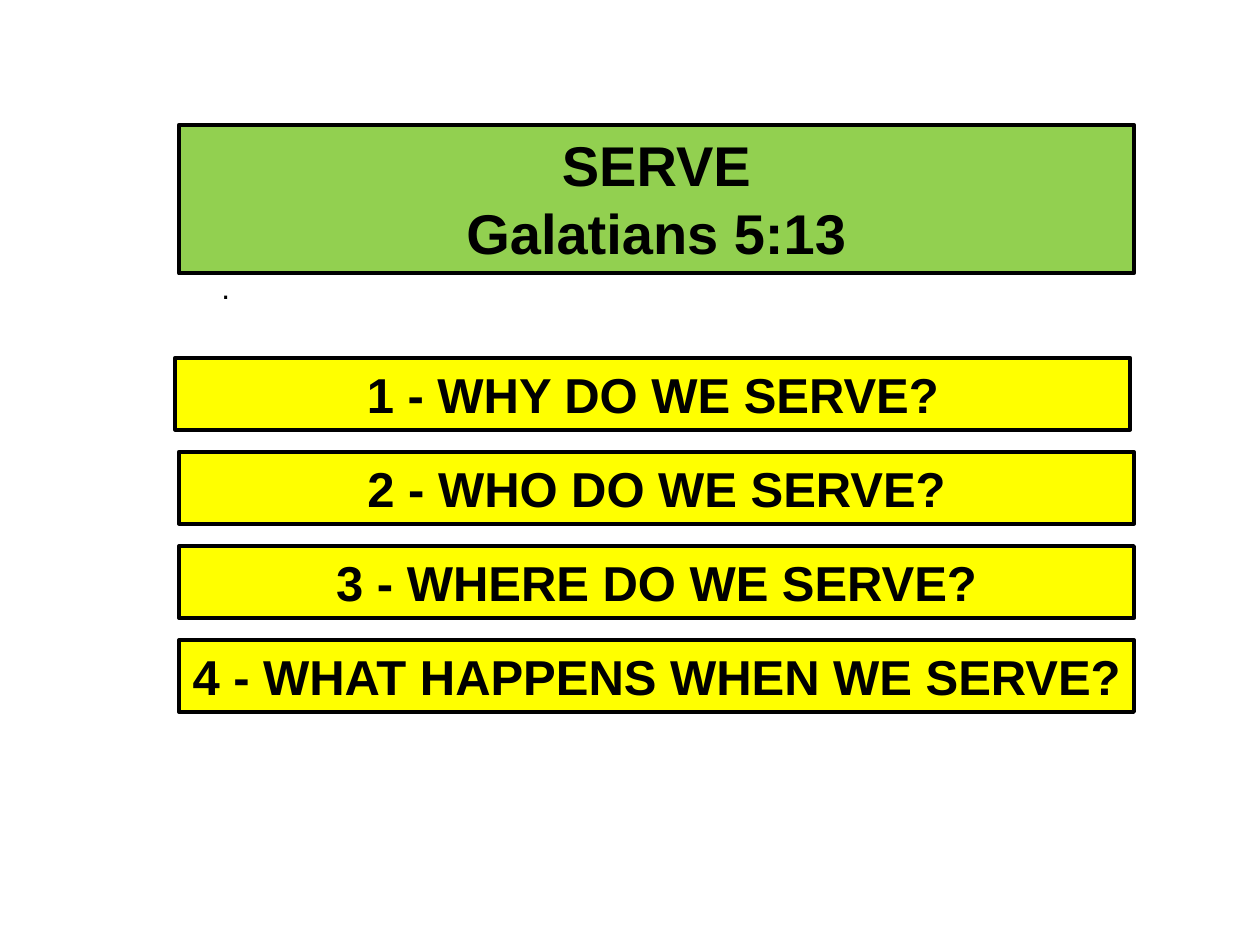
from pptx import Presentation
from pptx.dml.color import RGBColor
from pptx.enum.shapes import MSO_SHAPE as Shape
from pptx.enum.text import MSO_ANCHOR as Anchor, MSO_AUTO_SIZE as AutoSize, PP_ALIGN as Align
from pptx.util import Inches, Pt

BLACK, YELLOW, GREEN = "000000", "FFFF00", "92D050"
LEFT, WIDTH = 1.42, 7.58
QUESTION_TOP, QUESTION_PITCH, QUESTION_HEIGHT = 2.84, 0.747, 0.57
QUESTIONS = [
    "1 - WHY DO WE SERVE?",
    "2 - WHO DO WE SERVE?",
    "3 - WHERE DO WE SERVE?",
    "4 - WHAT HAPPENS WHEN WE SERVE?",
]


def color(value):
    return RGBColor.from_string(value)


def write_text(shape, text, size, bold=False, align=Align.LEFT, wrap=True):
    text_frame = shape.text_frame
    text_frame.text = text
    text_frame.word_wrap = wrap
    text_frame.auto_size = AutoSize.SHAPE_TO_FIT_TEXT
    text_frame.vertical_anchor = Anchor.TOP
    for paragraph in text_frame.paragraphs:
        paragraph.alignment = align
        for run in paragraph.runs:
            run.font.name = "Arial"
            run.font.size = Pt(size)
            run.font.bold = bold
            run.font.color.rgb = color(BLACK)


def add_banner(slide, text, left, top, height, fill, size):
    shape = slide.shapes.add_shape(
        Shape.RECTANGLE, Inches(left), Inches(top), Inches(WIDTH), Inches(height))
    shape.shadow.inherit = False
    shape.fill.solid()
    shape.fill.fore_color.rgb = color(fill)
    shape.line.color.rgb = color(BLACK)
    shape.line.width = Pt(2.25)
    write_text(shape, text, size, bold=True, align=Align.CENTER)


def main():
    presentation = Presentation()
    presentation.slide_width, presentation.slide_height = Inches(10), Inches(7.5)
    slide = presentation.slides.add_slide(presentation.slide_layouts[6])

    # Small dot below the title
    dot = slide.shapes.add_textbox(Inches(1.66), Inches(2.08), Inches(0.27), Inches(0.4))
    write_text(dot, ".", 18, wrap=False)

    # Questions, the first set slightly to the left
    for index, question in enumerate(QUESTIONS):
        left = LEFT - 0.03 if index == 0 else LEFT
        top = QUESTION_TOP + index * QUESTION_PITCH
        add_banner(slide, question, left, top, QUESTION_HEIGHT, YELLOW, 28)

    # Title
    add_banner(slide, "SERVE\nGalatians 5:13", LEFT, 0.99, 1.18, GREEN, 32)

    presentation.save("out.pptx")


if __name__ == "__main__":
    main()
